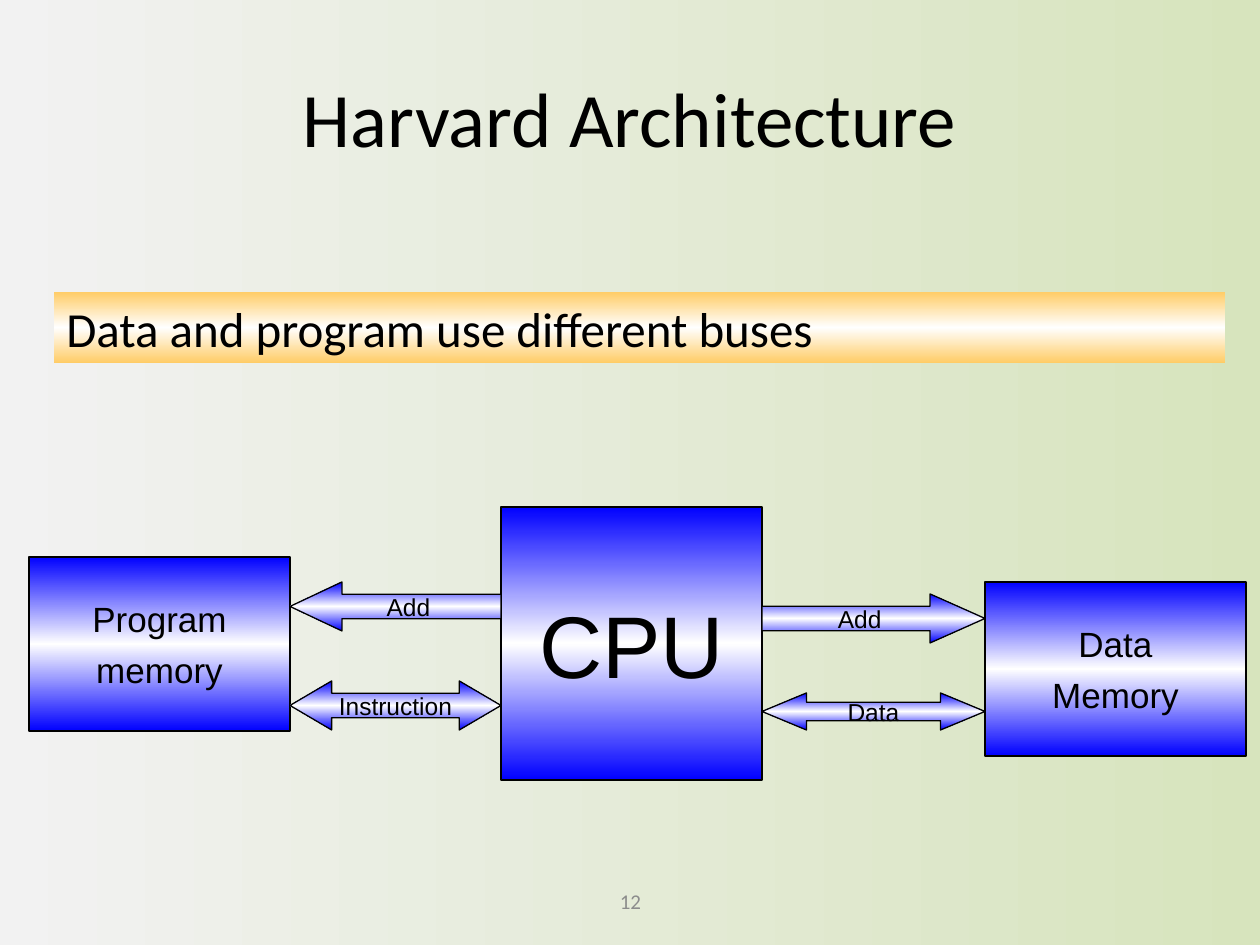
"""Build the Harvard Architecture slide."""
from copy import deepcopy
from dataclasses import dataclass

from pptx import Presentation
from pptx import util as u
from pptx.dml.color import RGBColor
from pptx.enum import shapes, text
from pptx.oxml.ns import qn

EMU_PER_PX = u.Inches(1) / 126
BLACK = RGBColor(0x00, 0x00, 0x00)
WHITE = RGBColor(0xFF, 0xFF, 0xFF)
BLUE = RGBColor(0x00, 0x00, 0xFF)
AMBER = RGBColor(0xFF, 0xCC, 0x66)
GRAY = RGBColor(0x8C, 0x8C, 0x8C)
PALE_GRAY = RGBColor(0xF2, 0xF2, 0xF2)
PALE_GREEN = RGBColor(0xD7, 0xE4, 0xBD)
KIND = shapes.MSO_SHAPE
ALIGN = text.PP_ALIGN
MIDDLE = text.MSO_ANCHOR.MIDDLE


@dataclass(frozen=True)
class Area:
    """A rectangle in px."""
    left: int
    top: int
    width: int
    height: int

    def emu(self) -> list[int]:
        """Return the four lengths in EMU."""
        return [u.Emu(round(value * EMU_PER_PX))
                for value in (self.left, self.top, self.width, self.height)]


@dataclass(frozen=True)
class Block:
    """A labelled unit or bus of the diagram."""
    kind: KIND
    area: Area
    lines: tuple[str, ...]
    size: int
    head: float | None = None


BLOCKS = (
    Block(KIND.RECTANGLE, Area(29, 557, 261, 174), ("Program", "memory"), 20),
    Block(KIND.RECTANGLE, Area(985, 582, 261, 174), ("Data", "Memory"), 20),
    Block(KIND.RECTANGLE, Area(501, 507, 261, 273), ("CPU",), 50),
    Block(KIND.LEFT_ARROW, Area(290, 582, 211, 49), ("Add",), 14, 1.06),
    Block(KIND.LEFT_RIGHT_ARROW, Area(290, 681, 211, 49), ("Instruction",), 14, 0.85),
    Block(KIND.LEFT_RIGHT_ARROW, Area(762, 693, 223, 37), ("Data",), 14, 1.2),
    Block(KIND.RIGHT_ARROW, Area(762, 594, 223, 49), ("Add",), 14, 1.12),
)


def paint_gradient(fill, element, colors: tuple[RGBColor, ...], angle: int) -> None:
    """Fill with evenly spaced gradient colours."""
    fill.gradient()
    fill.gradient_angle = angle
    stop_list = next(element.iter(qn("a:gsLst")))
    for _ in range(len(colors) - len(stop_list)):
        stop_list.append(deepcopy(stop_list[0]))
    for index, (stop, color) in enumerate(zip(fill.gradient_stops, colors)):
        stop.position = index / (len(colors) - 1)
        stop.color.rgb = color


def write(frame, lines: tuple[str, ...], font: str, size: int,
          align: ALIGN, color: RGBColor = BLACK, gap: float = 0) -> None:
    """Write one paragraph per line, with a gap relative to the text size."""
    for index, line in enumerate(lines):
        para = frame.add_paragraph() if index else frame.paragraphs[0]
        para.alignment = align
        para.space_before = u.Pt(round(size * gap))
        span = para.add_run()
        span.text = line
        span.font.name = font
        span.font.size = u.Pt(size)
        span.font.color.rgb = color


def add_banded(page, kind: KIND, area: Area, edge: RGBColor):
    """Add a shape whose fill is white across the middle."""
    box = page.shapes.add_shape(kind, *area.emu())
    box.shadow.inherit = False
    paint_gradient(box.fill, box._element, (edge, WHITE, edge), 90)
    return box


def add_block(page, block: Block) -> None:
    """Draw one unit or bus with its label."""
    box = add_banded(page, block.kind, block.area, BLUE)
    box.line.color.rgb = BLACK
    box.line.width = u.Pt(0.75)
    if block.head is not None:
        box.adjustments[0] = 0.5
        box.adjustments[1] = block.head
    frame = box.text_frame
    frame.word_wrap = False
    frame.vertical_anchor = MIDDLE
    write(frame, block.lines, "Arial", block.size, ALIGN.CENTER, gap=0.24)


def add_statement(page) -> None:
    """Draw the amber statement bar."""
    bar = add_banded(page, KIND.RECTANGLE, Area(54, 292, 1171, 71), AMBER)
    bar.line.fill.background()
    frame = bar.text_frame
    frame.word_wrap = True
    frame.vertical_anchor = text.MSO_ANCHOR.TOP
    write(frame, ("Data and program use different buses",), "Calibri", 28,
          ALIGN.LEFT, gap=0.2)


def add_page_number(page) -> None:
    """Write the page number at the foot."""
    frame = page.shapes.add_textbox(*Area(431, 876, 399, 50).emu()).text_frame
    frame.word_wrap = True
    frame.vertical_anchor = MIDDLE
    write(frame, ("12",), "Calibri", 12, ALIGN.CENTER, GRAY)


def main() -> None:
    """Build and save the deck."""
    deck = Presentation()
    deck.slide_width, deck.slide_height = Area(0, 0, 1260, 945).emu()[2:]
    page = deck.slides.add_slide(deck.slide_layouts[5])
    paint_gradient(page.background.fill, page._element, (PALE_GRAY, PALE_GREEN), 0)
    add_page_number(page)
    title = page.shapes.title
    title.left, title.top, title.width, title.height = Area(63, 38, 1134, 158).emu()
    title.text_frame.vertical_anchor = MIDDLE
    write(title.text_frame, ("Harvard Architecture",), "Calibri", 44, ALIGN.CENTER)
    for block in BLOCKS:
        add_block(page, block)
    add_statement(page)
    deck.save("out.pptx")


if __name__ == "__main__":
    main()
